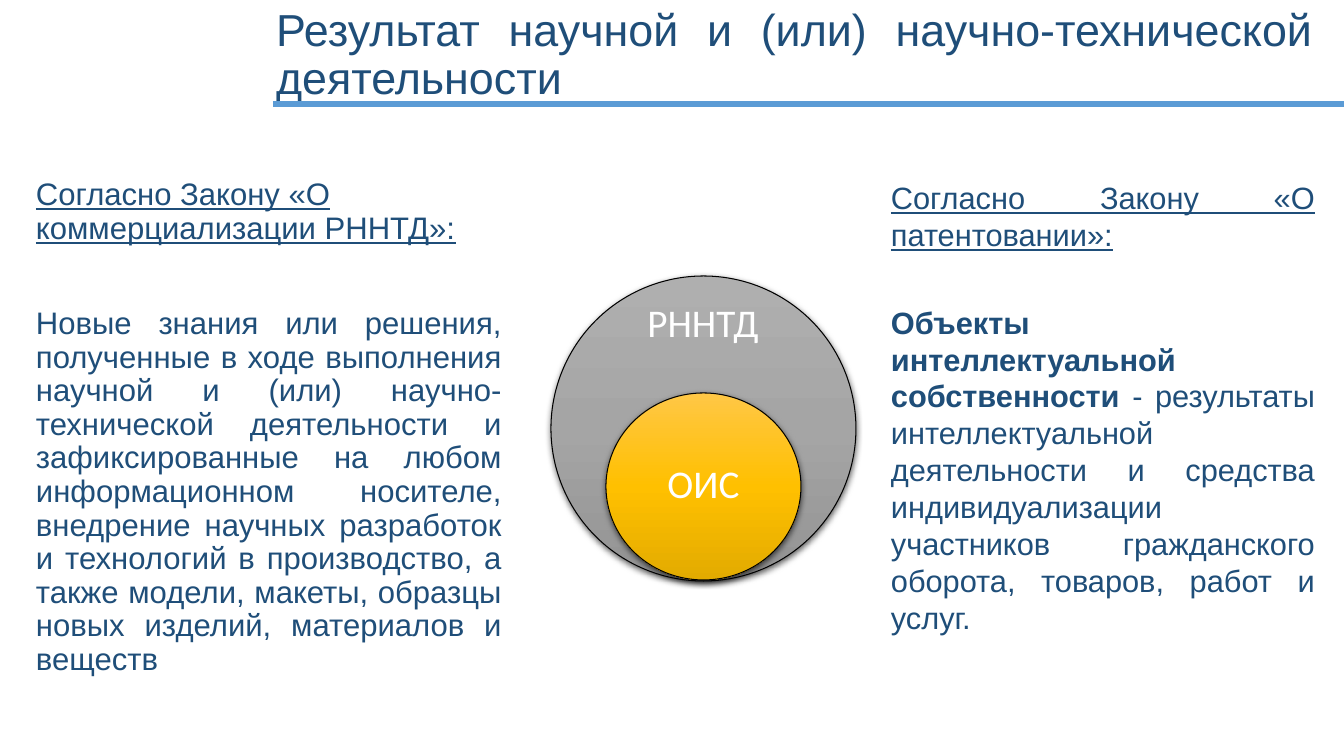
from lxml.etree import SubElement
from pptx import Presentation
from pptx.dml.color import RGBColor
from pptx.enum.shapes import MSO_CONNECTOR, MSO_SHAPE
from pptx.enum.text import MSO_ANCHOR, PP_ALIGN
from pptx.oxml.ns import qn
from pptx.util import Emu, Pt

EMU_PER_PX = 914400 / 100.8
NAVY = "1F4E79"
GREYS = ("AFAFAF", "A5A5A5", "939393")
YELLOWS = ("FFC746", "FFC000", "E3AB00")


def px(length):
    return Emu(round(length * EMU_PER_PX))


def color(value):
    return RGBColor.from_string(value)


def add_text(page, area, anchor=MSO_ANCHOR.TOP, margins=(10, 5)):
    box = page.shapes.add_textbox(*map(px, area))
    frame = box.text_frame
    frame.word_wrap = True
    frame.vertical_anchor = anchor
    frame.margin_left = frame.margin_right = px(margins[0])
    frame.margin_top = frame.margin_bottom = px(margins[1])
    return frame


def add_paragraph(frame, spans, size, align=PP_ALIGN.JUSTIFY, spacing=1.0,
                  before=0, fill=NAVY, font="Arial", underline=False):
    first = frame.paragraphs[0]
    para = frame.add_paragraph() if first.runs else first
    para.alignment = align
    para.line_spacing = spacing
    para.space_before = Pt(before)
    for text, bold in spans:
        span = para.add_run()
        span.text = text
        span.font.name = font
        span.font.size = Pt(size)
        span.font.bold = bold
        span.font.underline = underline
        span.font.color.rgb = color(fill)


def add_color(parent, value):
    return SubElement(parent, qn("a:srgbClr"), val=value)


def add_circle(page, area, shades):
    circle = page.shapes.add_shape(MSO_SHAPE.OVAL, *map(px, area))
    circle.line.color.rgb = color("000000")
    circle.line.width = Pt(0.75)
    circle.fill.gradient()
    circle.fill.gradient_angle = 270
    properties = circle.element.spPr
    stops = properties.find(qn("a:gradFill")).find(qn("a:gsLst"))
    for stop in list(stops):
        stops.remove(stop)
    for index, shade in enumerate(shades):
        add_color(SubElement(stops, qn("a:gs"), pos=str(index * 50000)), shade)
    circle.shadow.inherit = False
    shadow = SubElement(properties.find(qn("a:effectLst")), qn("a:outerShdw"),
                        blurRad=str(Pt(4.5)), dist=str(Pt(1.5)),
                        dir="5400000", algn="ctr", rotWithShape="0")
    SubElement(add_color(shadow, "000000"), qn("a:alpha"), val="63000")


def add_label(page, area, text):
    frame = add_text(page, area, MSO_ANCHOR.MIDDLE, (0, 0))
    add_paragraph(frame, [(text, False)], 28, PP_ALIGN.CENTER, 0.9,
                  fill="FFFFFF", font="Calibri")


def add_rule(page, left, right, top):
    rule = page.shapes.add_connector(
        MSO_CONNECTOR.STRAIGHT, px(left), px(top), px(right), px(top))
    rule.line.color.rgb = color("5B9BD5")
    rule.line.width = Pt(4.5)
    SubElement(rule.element.spPr, qn("a:effectLst"))


def main():
    deck = Presentation()
    deck.slide_width, deck.slide_height = px(1344), px(756)
    page = deck.slides.add_slide(deck.slide_layouts[6])

    title = add_text(page, (266, -10, 1057, 132), MSO_ANCHOR.MIDDLE)
    add_paragraph(title, [("Результат научной и (или) научно-технической "
                           "деятельности", False)], 32, spacing=0.9)

    results = add_text(page, (26, 174, 486, 509))
    add_paragraph(results, [("Согласно Закону «О коммерциализации РННТД»:", False)],
                  22.2, PP_ALIGN.LEFT, 0.9, underline=True)
    add_paragraph(results, [(
        "Новые знания или решения, полученные в ходе выполнения научной и (или) "
        "научно-технической деятельности и зафиксированные на любом "
        "информационном носителе, внедрение научных разработок и технологий в "
        "производство, а также модели, макеты, образцы новых изделий, "
        "материалов и веществ", False)], 22.2, spacing=0.9, before=44)

    patents = add_text(page, (881, 174, 444, 479))
    add_paragraph(patents, [("Согласно Закону «О патентовании»:", False)],
                  22, underline=True)
    add_paragraph(patents, [
        ("Объекты интеллектуальной собственности ", True),
        ("- результаты интеллектуальной деятельности и средства "
         "индивидуализации участников гражданского оборота, товаров, работ "
         "и услуг.", False)], 22, before=36)

    add_circle(page, (551, 276, 305, 305), GREYS)
    add_label(page, (623, 299, 160, 52), "РННТД")
    add_circle(page, (606, 393, 195, 187), YELLOWS)
    add_label(page, (635, 439, 137, 94), "ОИС")

    add_rule(page, 273, 1344, 104)
    deck.save("out.pptx")


if __name__ == "__main__":
    main()
